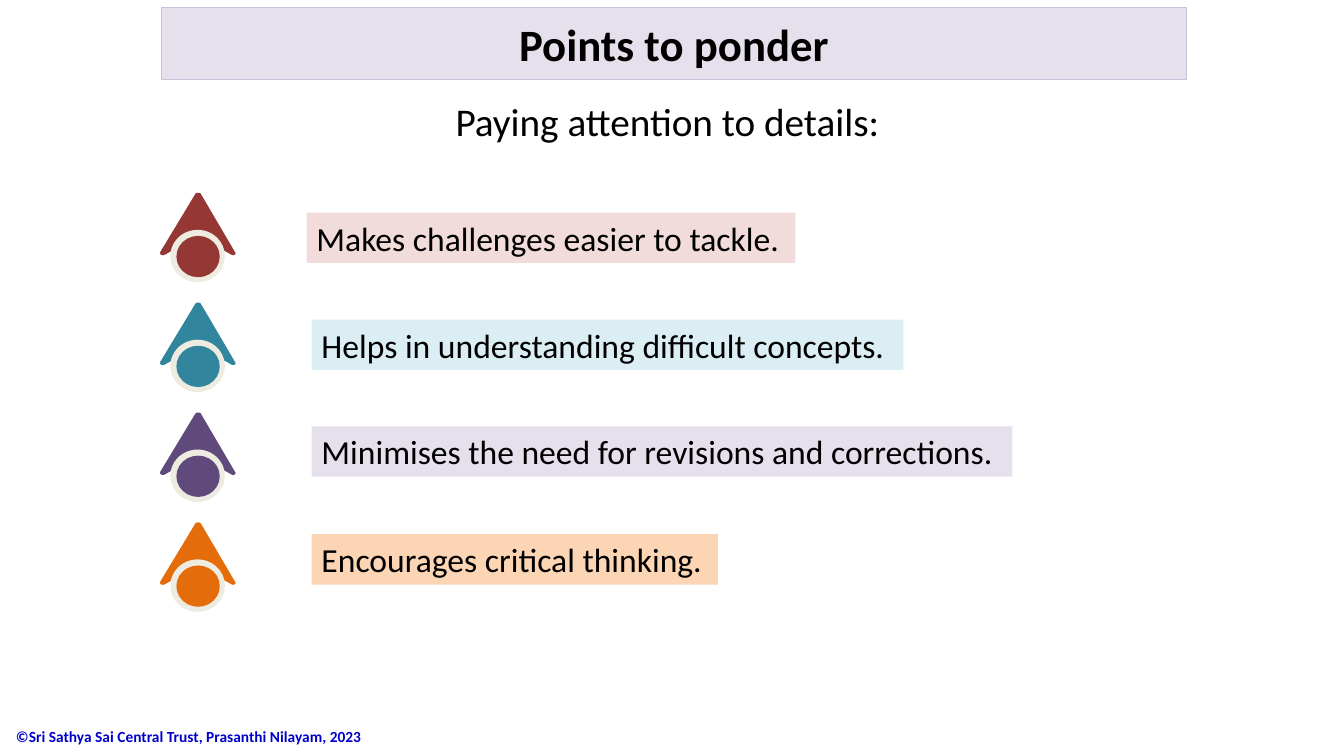
"""Build the "Points to ponder" slide."""
from pptx import Presentation
from pptx import util as u
from pptx.dml import color
from pptx.enum import shapes, text

PX = u.Inches(1) // 100
ROW_STEP = 109
POINTS = [
    ("Makes challenges easier to tackle.", 304, 485, "953735", "F2DCDB"),
    ("Helps in understanding difficult concepts.", 309, 587, "31859C", "DBEEF4"),
    ("Minimises the need for revisions and corrections.", 309, 695, "604A7B", "E6E0EC"),
    ("Encourages critical thinking.", 309, 403, "E46C0A", "FCD5B5"),
]
ARROW_CORNERS = [
    [(195, 235), (196, 235), (197, 235), (198, 235)],
    [(230, 253), (232, 254), (235, 252), (233, 250)],
    [(199, 192), (198, 191), (195, 191), (194, 192)],
    [(159, 250), (158, 252), (160, 254), (163, 253)],
]


def rgb(value):
    """Return the colour of a hex string."""
    return color.RGBColor.from_string(value)


def emu(*lengths):
    """Turn px lengths into EMU."""
    return [round(length * PX) for length in lengths]


def paint(shape, fill):
    """Give a shape a flat fill without line or shadow."""
    shape.shadow.inherit = False
    shape.fill.solid()
    shape.fill.fore_color.rgb = rgb(fill)
    shape.line.fill.background()


def write(box, wording, size, ink="000000", bold=False,
          align=text.PP_ALIGN.LEFT, anchor=text.MSO_ANCHOR.TOP):
    """Put one formatted paragraph into a box."""
    frame = box.text_frame
    frame.word_wrap = True
    frame.vertical_anchor = anchor
    para = frame.paragraphs[0]
    para.alignment = align
    span = para.add_run()
    span.text = wording
    look = {"name": "Calibri", "size": u.Pt(size), "bold": bold}
    for name, value in look.items():
        setattr(span.font, name, value)
    span.font.color.rgb = rgb(ink)


def add_label(page, place, wording, size, fill=None, **look):
    """Add a text box, filled when a colour is given."""
    box = page.shapes.add_textbox(*emu(*place))
    if fill:
        paint(box, fill)
    write(box, wording, size, **look)


def curve(corner, steps=5):
    """Sample a cubic curve given by four points."""
    for step in range(steps + 1):
        t = step / steps
        weights = ((1 - t) ** 3, 3 * t * (1 - t) ** 2, 3 * t ** 2 * (1 - t), t ** 3)
        yield tuple(sum(w * point[axis] for w, point in zip(weights, corner))
                    for axis in (0, 1))


def add_marker(page, drop, fill):
    """Add an arrowhead with a ringed disc, lowered by a drop."""
    group = page.shapes.add_group_shape()
    outline = [emu(x, y + drop) for corner in ARROW_CORNERS for x, y in curve(corner)]
    builder = group.shapes.build_freeform(*outline[0])
    builder.add_line_segments(outline[1:], close=True)
    paint(builder.convert_to_shape(), fill)
    for left, top, width, height, tint in ((169, 228, 54, 52, "EEECE1"),
                                           (175, 234, 43, 41, fill)):
        disc = group.shapes.add_shape(shapes.MSO_SHAPE.OVAL,
                                      *emu(left, top + drop, width, height))
        paint(disc, tint)


def add_title(page, wording):
    """Format the title placeholder as a tinted banner."""
    title = page.shapes.title
    for name, value in zip(("left", "top", "width", "height"), emu(160, 7, 1017, 72)):
        setattr(title, name, value)
    title.fill.solid()
    title.fill.fore_color.rgb = rgb("E6E0EC")
    title.line.color.rgb = rgb("CCC1DA")
    title.line.width = u.Pt(0.75)
    write(title, wording, 32, bold=True, align=text.PP_ALIGN.CENTER,
          anchor=text.MSO_ANCHOR.MIDDLE)


def main():
    """Build and save the deck."""
    deck = Presentation()
    deck.slide_width, deck.slide_height = u.Inches(13.33), u.Inches(7.5)
    page = deck.slides.add_slide(deck.slide_layouts[5])
    add_label(page, (6, 710, 381, 41),
              "©Sri Sathya Sai Central Trust, Prasanthi Nilayam, 2023", 11,
              ink="0000CC", bold=True, anchor=text.MSO_ANCHOR.MIDDLE)
    add_title(page, "Points to ponder")
    add_label(page, (442, 92, 450, 57), "Paying attention to details:", 28)
    for row, (wording, left, width, dark, pale) in enumerate(POINTS):
        add_marker(page, row * ROW_STEP, dark)
        add_label(page, (left, 211 + row * 319 // 3, width, 50), wording, 24, fill=pale)
    deck.save("out.pptx")


if __name__ == "__main__":
    main()
